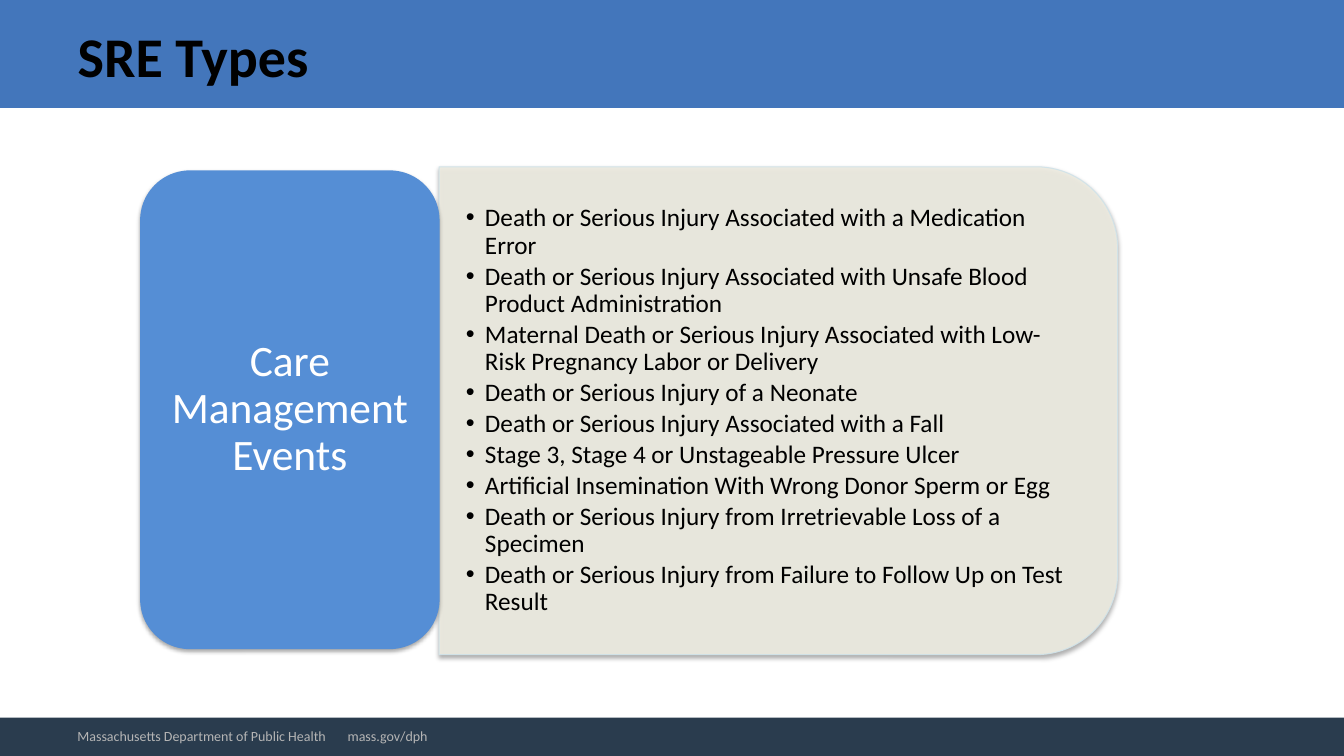
from lxml import etree
from pptx import Presentation
from pptx.dml.color import RGBColor
from pptx.enum import shapes, text
from pptx.oxml import ns
from pptx.util import Inches, Pt

HEADER_BLUE = RGBColor(0x43, 0x76, 0xBB)
FOOTER_NAVY = RGBColor(0x2A, 0x3C, 0x4E)
TILE_BLUE = RGBColor(0x55, 0x8E, 0xD5)
PANEL_CREAM = RGBColor(0xEE, 0xEC, 0xE1)
PANEL_LINE = RGBColor(0xD0, 0xE3, 0xEA)
FOOTER_GRAY = RGBColor(0xB5, 0xB5, 0xB5)
BLACK = RGBColor(0, 0, 0)
WHITE = RGBColor(0xFF, 0xFF, 0xFF)

EVENTS = [
    "Death or Serious Injury Associated with a Medication Error",
    "Death or Serious Injury Associated with Unsafe Blood Product Administration",
    "Maternal Death or Serious Injury Associated with Low-Risk Pregnancy Labor or Delivery",
    "Death or Serious Injury of a Neonate",
    "Death or Serious Injury Associated with a Fall",
    "Stage 3, Stage 4 or Unstageable Pressure Ulcer",
    "Artificial Insemination With Wrong Donor Sperm or Egg",
    "Death or Serious Injury from Irretrievable Loss of a Specimen",
    "Death or Serious Injury from Failure to Follow Up on Test Result",
]


def add_xml(parent, tag, **attributes):
    return etree.SubElement(parent, ns.qn(tag), attributes)


def set_opacity(element, percent):
    """Make every solid colour inside the element partly transparent."""
    for color in element.iter(ns.qn("a:srgbClr")):
        add_xml(color, "a:alpha", val=str(percent * 1000))


class SlideBuilder:
    font_name = "Calibri"

    def __init__(self, slide):
        self.slide = slide

    def shape(self, kind, box, fill):
        shape = self.slide.shapes.add_shape(kind, *map(Inches, box))
        shape.shadow.inherit = False
        shape.fill.solid()
        shape.fill.fore_color.rgb = fill
        shape.line.fill.background()
        return shape

    def soft_shadow(self, shape):
        effects = shape.element.spPr.find(ns.qn("a:effectLst"))
        shadow = add_xml(effects, "a:outerShdw", blurRad=str(Pt(3.1)), dist=str(Pt(1.8)),
                         dir="5400000", rotWithShape="0")
        color = add_xml(shadow, "a:srgbClr", val="000000")
        add_xml(color, "a:alpha", val="35000")

    def placeholder(self, index, box):
        """Position a placeholder and bring it to the front."""
        shape = self.slide.placeholders[index]
        shape.left, shape.top, shape.width, shape.height = map(Inches, box)
        shape.element.getparent().append(shape.element)
        return shape

    def text(self, shape, content, size, color, bold=False, align=text.PP_ALIGN.LEFT,
             insets=(0.1, 0.05)):
        frame = shape.text_frame
        frame.text = content
        frame.word_wrap = True
        frame.auto_size = text.MSO_AUTO_SIZE.NONE
        frame.vertical_anchor = text.MSO_ANCHOR.MIDDLE
        frame.margin_left = frame.margin_right = Inches(insets[0])
        frame.margin_top = frame.margin_bottom = Inches(insets[1])
        for paragraph in frame.paragraphs:
            paragraph.alignment = align
            for run in paragraph.runs:
                run.font.name = self.font_name
                run.font.size = Pt(size)
                run.font.bold = bold
                run.font.color.rgb = color
        return frame

    def bullets(self, shape, items, size, color):
        frame = self.text(shape, "\n".join(items), size, color, insets=(0.27, 0.14))
        for paragraph in frame.paragraphs:
            paragraph.level = 1
            paragraph.line_spacing = 0.9
            paragraph.space_before = Pt(0)
            paragraph.space_after = Pt(0.15 * size)
            properties = paragraph._p.get_or_add_pPr()
            properties.set("marL", str(Inches(0.19)))
            properties.set("indent", str(Inches(-0.19)))
            add_xml(properties, "a:buFont", typeface="Arial")
            add_xml(properties, "a:buChar", char="•")

    def footer(self, box, content, size, color, tab):
        shape = self.slide.shapes.add_textbox(*map(Inches, box))
        frame = self.text(shape, content, size, color)
        properties = frame.paragraphs[0]._p.get_or_add_pPr()
        tabs = add_xml(properties, "a:tabLst")
        add_xml(tabs, "a:tab", pos=str(Inches(tab)), algn="l")


def main():
    presentation = Presentation()
    presentation.slide_width = Inches(13.33)
    presentation.slide_height = Inches(7.5)
    slide = presentation.slides.add_slide(presentation.slide_layouts[1])
    builder = SlideBuilder(slide)
    kinds = shapes.MSO_SHAPE

    builder.shape(kinds.RECTANGLE, (0, 0, 13.33, 1.07), HEADER_BLUE)
    builder.shape(kinds.RECTANGLE, (0, 7.12, 13.33, 0.38), FOOTER_NAVY)
    title = builder.placeholder(0, (0.67, 0.16, 5.27, 0.77))
    builder.text(title, "SRE Types", 40, BLACK, bold=True)

    panel = builder.shape(kinds.ROUND_2_SAME_RECTANGLE, (5.3, 0.71, 4.84, 6.73), PANEL_CREAM)
    panel.rotation = 90
    panel.line.color.rgb = PANEL_LINE
    panel.line.width = Pt(0.75)
    set_opacity(panel.element.spPr, 90)
    builder.soft_shadow(panel)
    body = builder.placeholder(1, (4.35, 1.89, 6.49, 4.37))
    builder.bullets(body, EVENTS, 18, BLACK)

    tile = builder.shape(kinds.ROUNDED_RECTANGLE, (1.39, 1.69, 2.97, 4.75), TILE_BLUE)
    builder.soft_shadow(tile)
    label = builder.text(tile, "Care Management Events", 31, WHITE,
                         align=text.PP_ALIGN.CENTER, insets=(0.13, 0.06))
    label.paragraphs[0].line_spacing = 0.9

    builder.footer((0.67, 7.12, 4.17, 0.37),
                   "Massachusetts Department of Public Health\tmass.gov/dph",
                   10, FOOTER_GRAY, tab=2.68)
    presentation.save("out.pptx")


if __name__ == "__main__":
    main()
